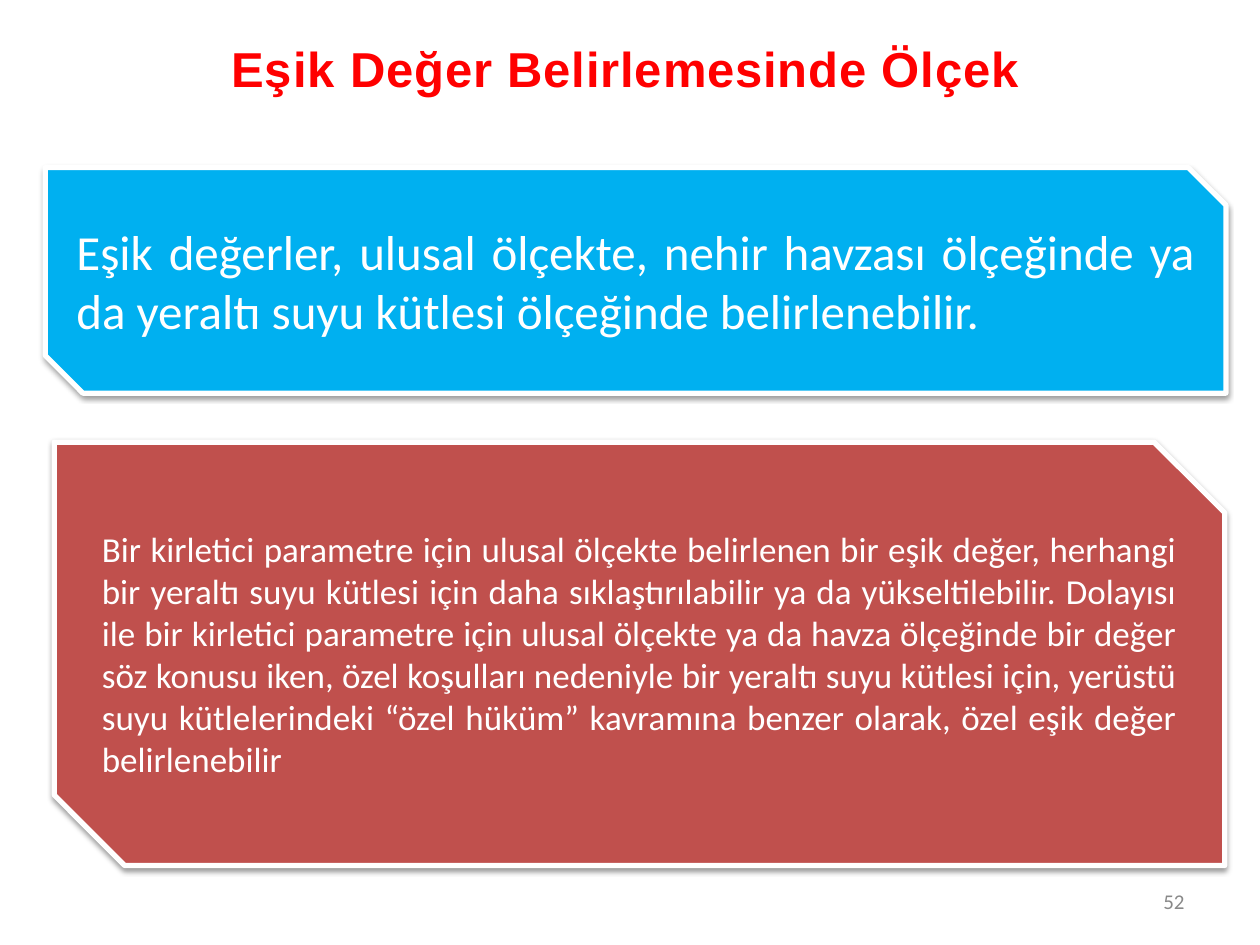
from lxml import etree
from pptx import Presentation
from pptx import util as u
from pptx.dml.color import RGBColor
from pptx.enum import shapes, text
from pptx.oxml import ns

WHITE = RGBColor(0xFF, 0xFF, 0xFF)
RED = RGBColor(0xFF, 0x00, 0x00)
BLUE = RGBColor(0x00, 0xB0, 0xF0)
BRICK = RGBColor(0xC0, 0x50, 0x4D)
GREY = RGBColor(0x89, 0x89, 0x89)

WIDTH, HEIGHT = u.Inches(10), u.Inches(7.5)

TITLE = "Eşik Değer Belirlemesinde Ölçek"
SCALE = ("Eşik değerler, ulusal ölçekte, nehir havzası ölçeğinde ya da "
         "yeraltı suyu kütlesi ölçeğinde belirlenebilir.")
SPECIAL = (
    "Bir kirletici parametre için ulusal ölçekte belirlenen bir eşik değer, "
    "herhangi bir yeraltı suyu kütlesi için daha sıklaştırılabilir ya da "
    "yükseltilebilir. Dolayısı ile bir kirletici parametre için ulusal ölçekte "
    "ya da havza ölçeğinde bir değer söz konusu iken, özel koşulları nedeniyle "
    "bir yeraltı suyu kütlesi için, yerüstü suyu kütlelerindeki “özel hüküm” "
    "kavramına benzer olarak, özel eşik değer belirlenebilir")


def share(left, top, width, height):
    """Turn percentages of the slide into a box in EMU."""
    return [round(part * side / 100) for part, side in
            zip((left, top, width, height), (WIDTH, HEIGHT) * 2)]


def write(sp, content, align, anchor, color, **font):
    tf = sp.text_frame
    tf.word_wrap = True
    tf.vertical_anchor = anchor
    p = tf.paragraphs[0]
    p.alignment = align
    r = p.add_run()
    r.text = content
    for name, value in font.items():
        setattr(r.font, name, value)
    r.font.color.rgb = color
    return p


def add_shadow(sp):
    sp.shadow.inherit = False
    effects = sp._element.spPr.find(ns.qn("a:effectLst"))
    shadow = etree.SubElement(
        effects, ns.qn("a:outerShdw"), blurRad=str(u.Pt(3.1)),
        dist=str(u.Pt(1.6)), dir="5400000", rotWithShape="0")
    color = etree.SubElement(shadow, ns.qn("a:srgbClr"), val="000000")
    etree.SubElement(color, ns.qn("a:alpha"), val="38000")


def add_title(s, box):
    sp = s.shapes.add_textbox(*box)
    sp.text_frame.margin_left = round(WIDTH * 0.11)
    p = write(sp, TITLE, text.PP_ALIGN.CENTER, text.MSO_ANCHOR.BOTTOM, RED,
              name="Arial", size=u.Pt(28), bold=True)
    p.line_spacing = 1.2
    p.runs[0].font._element.set("spc", "50")


def add_panel(s, box, content, fill, size):
    sp = s.shapes.add_shape(shapes.MSO_SHAPE.SNIP_2_DIAG_RECTANGLE, *box)
    sp.fill.solid()
    sp.fill.fore_color.rgb = fill
    sp.line.color.rgb = WHITE
    sp.line.width = u.Pt(3)
    add_shadow(sp)
    write(sp, content, text.PP_ALIGN.JUSTIFY, text.MSO_ANCHOR.MIDDLE, WHITE,
          name="Calibri", size=u.Pt(size))


def add_page_number(s, box):
    write(s.shapes.add_textbox(*box), "52", text.PP_ALIGN.RIGHT,
          text.MSO_ANCHOR.MIDDLE, GREY, name="Calibri", size=u.Pt(12))


def main():
    prs = Presentation()
    prs.slide_width, prs.slide_height = WIDTH, HEIGHT
    s = prs.slides.add_slide(prs.slide_layouts[6])
    add_page_number(s, share(71.7, 92.7, 23.3, 5.3))
    add_panel(s, share(4.3, 46.8, 92.9, 44.8), SPECIAL, BRICK, 20)
    add_panel(s, share(3.6, 17.73, 93.7, 23.87), SCALE, BLUE, 28)
    add_title(s, share(5.1, 0.93, 79.1, 10))
    prs.save("out.pptx")


if __name__ == "__main__":
    main()
